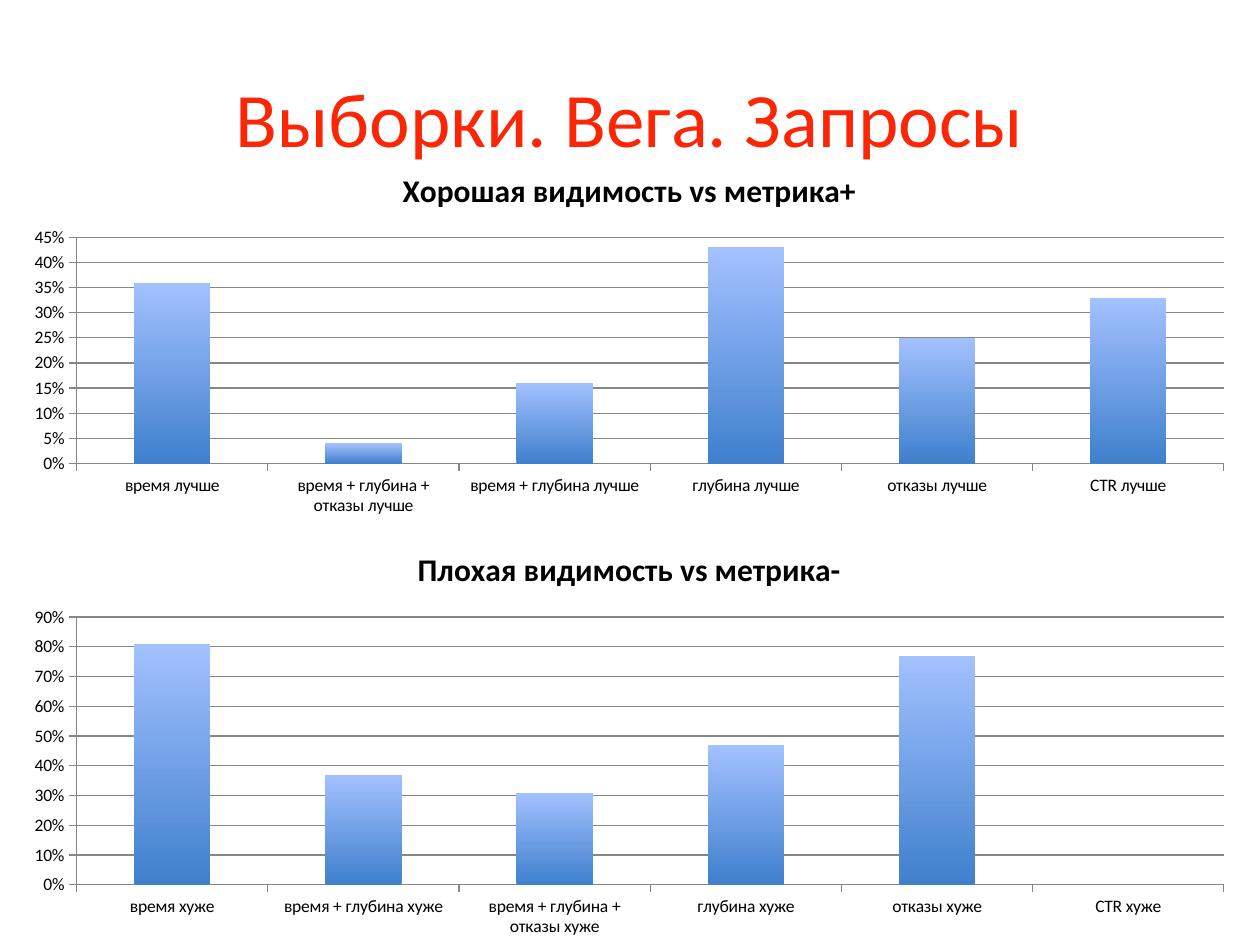
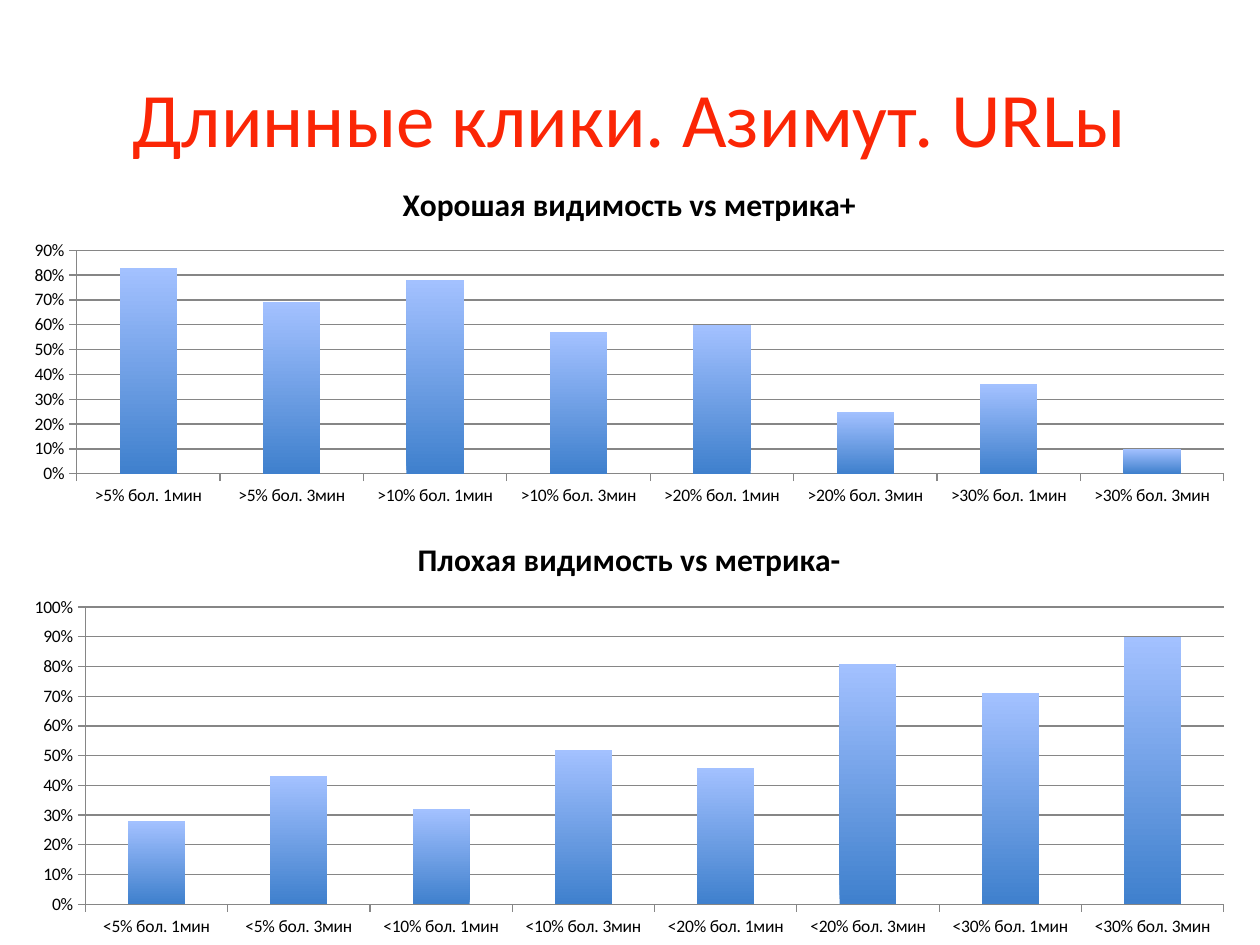
from dataclasses import dataclass

from lxml.etree import fromstring
from pptx import Presentation
from pptx.chart.axis import _BaseAxis as Axis
from pptx.chart.chart import Chart
from pptx.chart.data import CategoryChartData
from pptx.dml.color import RGBColor
from pptx.enum.chart import XL_CHART_TYPE as ChartType, XL_TICK_MARK as TickMark
from pptx.enum.text import MSO_ANCHOR as Anchor, PP_ALIGN as Align
from pptx.slide import Slide
from pptx.util import Cm, Pt

# Shared look
FONT = "Calibri"
TITLE_RED = "FB2606"
BLACK = "000000"
AXIS_GREY = "868686"
BAR_BOTTOM, BAR_TOP = "3F80CD", "A3C1FF"
SLIDE_WIDTH, SLIDE_HEIGHT = 25.4, 19.05
CHART_LEFT, CHART_WIDTH = 0.2, 24.97
GOOD_TITLE = "Хорошая видимость vs метрика+"
BAD_TITLE = "Плохая видимость vs метрика-"

CLEAR_BACKGROUND = (
    '<c:spPr xmlns:c="http://schemas.openxmlformats.org/drawingml/2006/chart" '
    'xmlns:a="http://schemas.openxmlformats.org/drawingml/2006/main">'
    "<a:noFill/><a:ln><a:noFill/></a:ln></c:spPr>"
)


@dataclass
class BarChart:
    title: str
    top: float
    height: float
    categories: list[str]
    values: list[float | None]
    maximum: float
    step: float = 0.1


@dataclass
class ChartSlide:
    title: str
    charts: list[BarChart]


def click_labels(sign: str) -> list[str]:
    return [f"{sign}{share}% бол. {minutes}мин"
            for share in (5, 10, 20, 30) for minutes in (1, 3)]


SLIDES = [
    ChartSlide("Выборки. Вега. Запросы", [
        BarChart(GOOD_TITLE, 3.0, 7.54,
                 ["время лучше", "время + глубина + отказы лучше",
                  "время + глубина лучше", "глубина лучше",
                  "отказы лучше", "CTR лучше"],
                 [0.36, 0.04, 0.16, 0.43, 0.25, 0.33], 0.45, 0.05),
        BarChart(BAD_TITLE, 10.62, 8.43,
                 ["время хуже", "время + глубина хуже",
                  "время + глубина + отказы хуже", "глубина хуже",
                  "отказы хуже", "CTR хуже"],
                 [0.81, 0.37, 0.31, 0.47, 0.77, None], 0.9),
    ]),
    ChartSlide("Длинные клики. Азимут. URLы", [
        BarChart(GOOD_TITLE, 3.28, 7.06, click_labels(">"),
                 [0.83, 0.69, 0.78, 0.57, 0.6, 0.25, 0.36, 0.1], 0.9),
        BarChart(BAD_TITLE, 10.41, 8.64, click_labels("<"),
                 [0.28, 0.43, 0.32, 0.52, 0.46, 0.81, 0.71, 0.9], 1.0),
    ]),
]


def color(value: str) -> RGBColor:
    return RGBColor.from_string(value)


def style_font(font, size: float, value: str, bold: bool = False) -> None:
    font.name, font.size, font.bold = FONT, Pt(size), bold
    font.color.rgb = color(value)


def style_line(line) -> None:
    line.color.rgb = color(AXIS_GREY)
    line.width = Pt(0.75)


def add_title(slide: Slide, text: str) -> None:
    box = slide.shapes.add_textbox(Cm(1.27), Cm(0.76), Cm(22.86), Cm(3.18))
    frame = box.text_frame
    frame.word_wrap = True
    frame.vertical_anchor = Anchor.MIDDLE
    paragraph = frame.paragraphs[0]
    paragraph.alignment = Align.CENTER
    run = paragraph.add_run()
    run.text = text
    style_font(run.font, 44, TITLE_RED)


def style_axis(axis: Axis) -> None:
    axis.major_tick_mark = TickMark.OUTSIDE
    axis.minor_tick_mark = TickMark.NONE
    style_line(axis.format.line)
    style_font(axis.tick_labels.font, 10, BLACK)


def style_bars(chart: Chart) -> None:
    plot = chart.plots[0]
    plot.gap_width = 150
    plot.vary_by_categories = False
    fill = plot.series[0].format.fill
    fill.gradient()
    fill.gradient_angle = 90
    for stop, value in zip(fill.gradient_stops, (BAR_BOTTOM, BAR_TOP)):
        stop.color.rgb = color(value)


def add_bar_chart(slide: Slide, bars: BarChart) -> None:
    data = CategoryChartData(number_format="0%")
    data.categories = bars.categories
    data.add_series("Series 1", bars.values)
    chart = slide.shapes.add_chart(
        ChartType.COLUMN_CLUSTERED, Cm(CHART_LEFT), Cm(bars.top),
        Cm(CHART_WIDTH), Cm(bars.height), data).chart
    chart.has_legend = False
    style_font(chart.font, 10, BLACK)

    # Chart title
    chart.has_title = True
    run = chart.chart_title.text_frame.paragraphs[0].add_run()
    run.text = bars.title
    style_font(run.font, 18, BLACK, bold=True)
    chart.chart_title.include_in_layout = False

    # Axes and gridlines
    style_axis(chart.category_axis)
    value_axis = chart.value_axis
    style_axis(value_axis)
    value_axis.minimum_scale, value_axis.maximum_scale = 0, bars.maximum
    value_axis.major_unit = bars.step
    value_axis.tick_labels.number_format = "0%"
    value_axis.tick_labels.number_format_is_linked = False
    value_axis.has_major_gridlines = True
    style_line(value_axis.major_gridlines.format.line)

    style_bars(chart)

    # Transparent background keeps the slide title visible
    chart.element.find("{*}chart").addnext(fromstring(CLEAR_BACKGROUND))


def main() -> None:
    presentation = Presentation()
    presentation.slide_width = Cm(SLIDE_WIDTH)
    presentation.slide_height = Cm(SLIDE_HEIGHT)
    for content in SLIDES:
        slide = presentation.slides.add_slide(presentation.slide_layouts[6])
        add_title(slide, content.title)
        for bars in content.charts:
            add_bar_chart(slide, bars)
    presentation.save("out.pptx")


if __name__ == "__main__":
    main()
